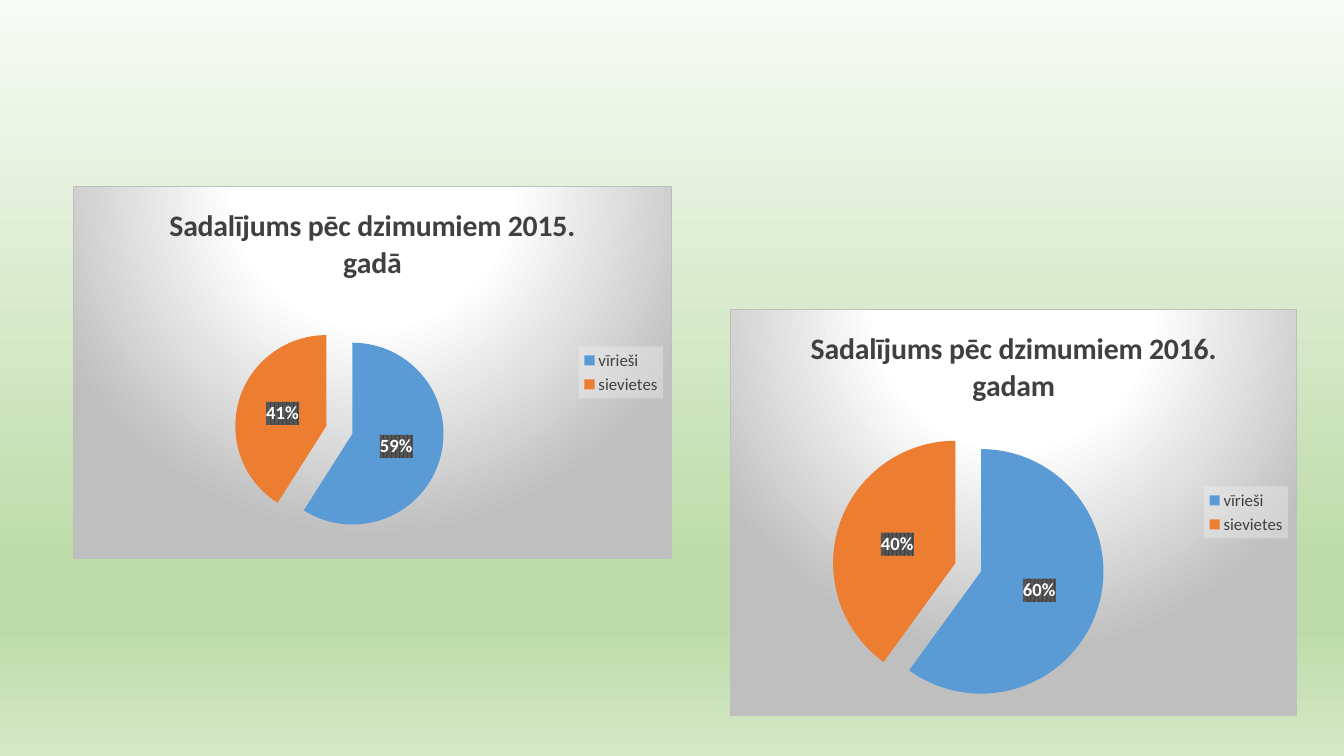
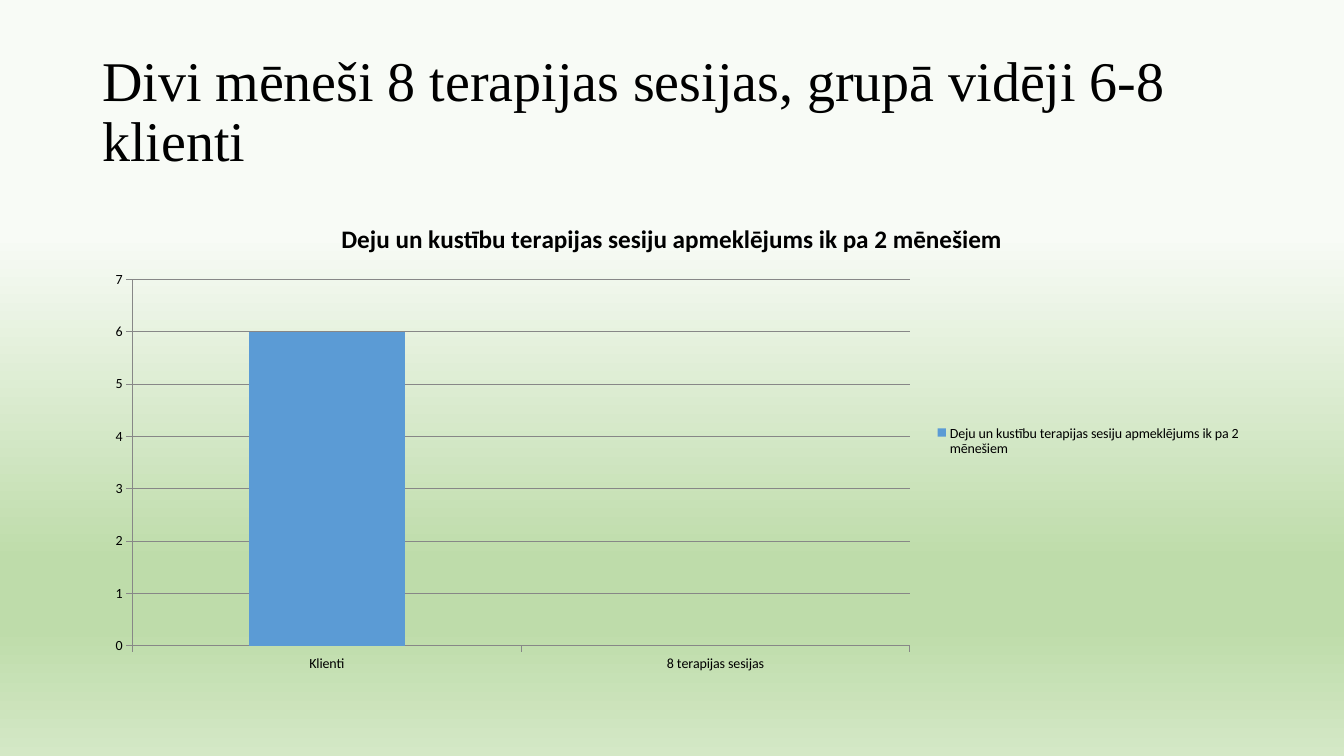
from pptx import Presentation
from pptx.chart.data import CategoryChartData as Data
from pptx.dml.color import RGBColor
from pptx.enum.chart import (XL_CHART_TYPE as Kind, XL_LABEL_POSITION as Spot,
                             XL_LEGEND_POSITION as Side, XL_TICK_MARK as Tick)
from pptx.enum.text import MSO_ANCHOR as Anchor
from pptx.oxml import parse_xml
from pptx.oxml.ns import nsdecls, qn
from pptx.util import Pt

BLACK = RGBColor(0x00, 0x00, 0x00)
WHITE = RGBColor(0xFF, 0xFF, 0xFF)
DARK = RGBColor(0x40, 0x40, 0x40)
MID = RGBColor(0x59, 0x59, 0x59)
LINE = RGBColor(0x87, 0x87, 0x87)
GREY = RGBColor(0xBF, 0xBF, 0xBF)
PALE = RGBColor(0xF2, 0xF2, 0xF2)
BLUE = RGBColor(0x5B, 0x9B, 0xD5)
ORANGE = RGBColor(0xED, 0x7D, 0x31)
MIST = RGBColor(0xF8, 0xFB, 0xF6)
LEAF = RGBColor(0xBE, 0xDC, 0xAA)
LIME = RGBColor(0xD4, 0xE8, 0xC6)

BODY = "Calibri"
HEAD = "Times New Roman"
DOWN = '<a:lin ang="5400000" scaled="0"/>'
GLOW = ('<a:path path="circle"><a:fillToRect l="50000" t="-80000" '
        'r="50000" b="180000"/></a:path>')
EDGE = (f'<a:ln w="{Pt(0.75)}"><a:solidFill><a:srgbClr val="{GREY}"/>'
        '</a:solidFill></a:ln>')
VEIL = (f'<a:solidFill><a:srgbClr val="{PALE}"><a:alpha val="39000"/>'
        '</a:srgbClr></a:solidFill>')
MESH = (f'<a:pattFill prst="pct75"><a:fgClr><a:srgbClr val="{DARK}"/></a:fgClr>'
        f'<a:bgClr><a:srgbClr val="{MID}"/></a:bgClr></a:pattFill>')


def blend(stops, way):
    marks = "".join(f'<a:gs pos="{spot * 1000}"><a:srgbClr val="{tone}"/></a:gs>'
                    for spot, tone in stops)
    return (f'<a:gradFill {nsdecls("a")} rotWithShape="1"><a:gsLst>{marks}'
            f'</a:gsLst>{way}</a:gradFill>')


def add_page(deck, start):
    page = deck.slides.add_slide(deck.slide_layouts[6])
    page.background.fill.solid()
    solid = page.element.find(".//" + qn("a:solidFill"))
    stops = [(start, MIST), (74, LEAF), (83, LEAF), (100, LIME)]
    solid.getparent().replace(solid, parse_xml(blend(stops, DOWN)))
    return page


def set_font(font, size, color, bold=False, name=BODY):
    font.size, font.bold, font.name = Pt(size), bold, name
    font.color.rgb = color


def paint(node, look):
    part = parse_xml(f'<c:spPr {nsdecls("c", "a")}>{look}</c:spPr>')
    node.find(qn("c:txPr")).addprevious(part)


def place(chart, box):
    area = chart.element.find(".//" + qn("c:plotArea"))
    for old in area.findall(qn("c:layout")):
        area.remove(old)
    sizes = "".join(f'<c:{key} val="{val}"/>' for key, val in zip("xywh", box))
    area.insert(0, parse_xml(
        f'<c:layout {nsdecls("c")}><c:manualLayout><c:layoutTarget val="inner"/>'
        '<c:xMode val="edge"/><c:yMode val="edge"/>'
        f'{sizes}</c:manualLayout></c:layout>'))


def add_chart(page, kind, at, title, names, series, vals, size, color, key_size):
    data = Data()
    data.categories = names
    data.add_series(series, vals)
    chart = page.shapes.add_chart(kind, *map(Pt, at), data).chart
    set_font(chart.font, 10, BLACK)
    chart.has_title = True
    frame = chart.chart_title.text_frame
    frame.text = title
    set_font(frame.paragraphs[0].font, size, color, True)
    chart.has_legend = True
    chart.legend.position = Side.RIGHT
    chart.legend.include_in_layout = False
    set_font(chart.legend.font, key_size, color)
    return chart


def add_pie(page, at, title, vals, gap, box):
    chart = add_chart(page, Kind.PIE, at, title, ["vīrieši", "sievietes"],
                      "Series 1", vals, 21.3, DARK, 12)
    plot = chart.plots[0]
    plot.vary_by_categories = True
    for index, tone in enumerate([BLUE, ORANGE]):
        fill = plot.series[0].points[index].format.fill
        fill.solid()
        fill.fore_color.rgb = tone
    plot.has_data_labels = True
    labels = plot.data_labels
    labels.show_value, labels.show_percentage = False, True
    labels.number_format, labels.number_format_is_linked = "0%", False
    labels.position = Spot.CENTER
    set_font(labels.font, 13.3, WHITE, True)
    root = chart.element
    root.find(".//" + qn("c:dPt")).addprevious(
        parse_xml(f'<c:explosion {nsdecls("c")} val="{gap}"/>'))
    paint(root.find(".//" + qn("c:dLbls")), MESH)
    paint(root.find(".//" + qn("c:legend")), VEIL)
    paint(root, blend([(0, WHITE), (39, WHITE), (100, GREY)], GLOW) + EDGE)
    place(chart, box)


def add_bars(page, at, title, names, vals):
    chart = add_chart(page, Kind.COLUMN_CLUSTERED, at, title, names,
                      title, vals, 18, BLACK, 10)
    plot = chart.plots[0]
    plot.vary_by_categories = False
    plot.gap_width = 150
    fill = plot.series[0].format.fill
    fill.solid()
    fill.fore_color.rgb = BLUE
    rise = chart.value_axis
    rise.has_major_gridlines = True
    for axis in (chart.category_axis, rise):
        axis.major_tick_mark = Tick.OUTSIDE
        axis.format.line.color.rgb = LINE
    rise.major_gridlines.format.line.color.rgb = LINE


def add_title(page, text, at):
    frame = page.shapes.add_textbox(*map(Pt, at)).text_frame
    frame.word_wrap = True
    frame.vertical_anchor = Anchor.MIDDLE
    line = frame.paragraphs[0]
    line.text = text
    line.line_spacing = 0.9
    set_font(line.font, 40, BLACK, name=HEAD)


def main():
    deck = Presentation()
    deck.slide_width, deck.slide_height = Pt(960), Pt(540)

    page = add_page(deck, 0)
    add_pie(page, (52, 133, 428, 266), "Sadalījums pēc dzimumiem 2015. gadā",
            (59, 41), 15, (0.27, 0.37, 0.35, 0.57))
    add_pie(page, (521.5, 220.5, 405, 291), "Sadalījums pēc dzimumiem 2016. gadam",
            (60, 40), 11, (0.18, 0.3, 0.48, 0.67))

    page = add_page(deck, 31)
    add_title(page, "Divi mēneši 8 terapijas sesijas, grupā vidēji 6-8 klienti",
              (66, 28.75, 828, 104.5))
    add_bars(page, (66, 144, 828, 342.5),
             "Deju un kustību terapijas sesiju apmeklējums ik pa 2 mēnešiem",
             ["Klienti", "8 terapijas sesijas"], (6, None))

    deck.save("out.pptx")


if __name__ == "__main__":
    main()
